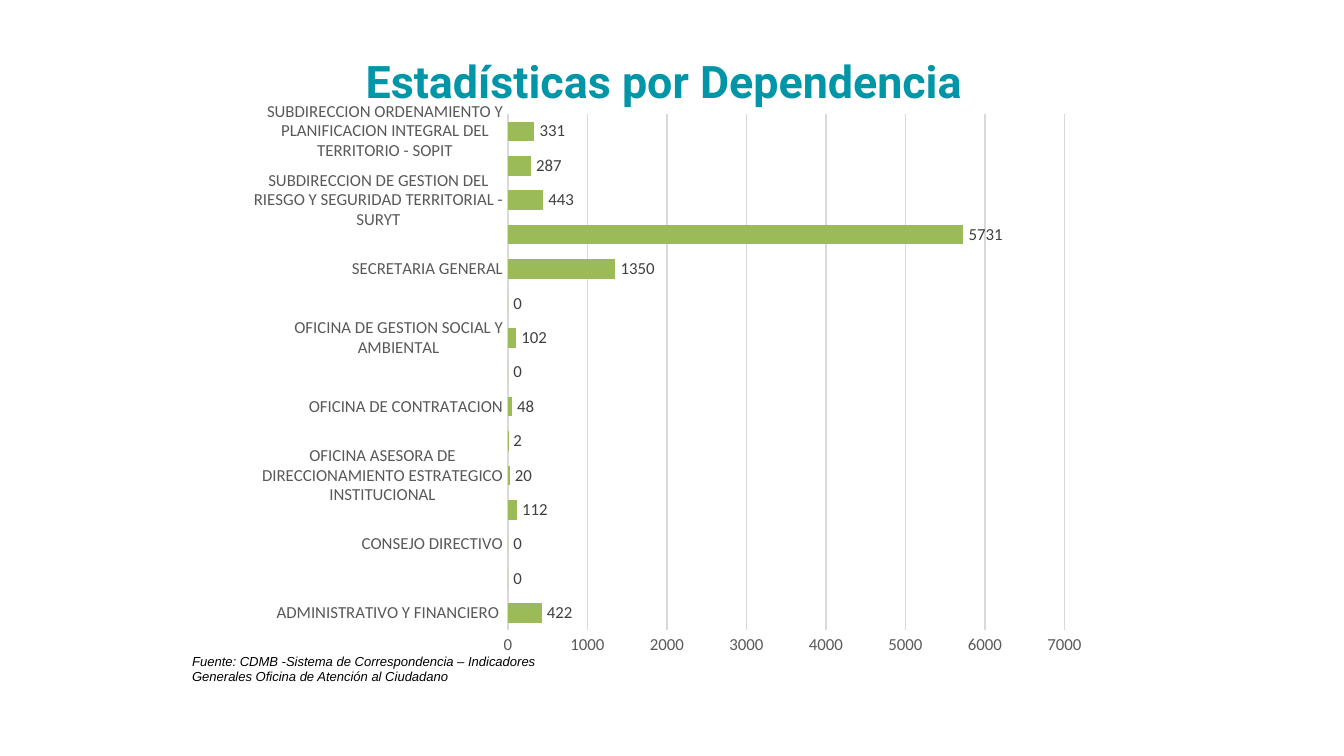
from lxml import etree
from pptx import Presentation
from pptx.chart.data import CategoryChartData
from pptx.dml.color import RGBColor
from pptx.enum import chart as charts, text
from pptx.oxml import ns
from pptx.util import Inches, Pt

TEAL = RGBColor(0x00, 0x96, 0xA7)
GREEN = RGBColor(0x9B, 0xBB, 0x59)
BLACK = RGBColor(0x00, 0x00, 0x00)
DARK_GRAY = RGBColor(0x40, 0x40, 0x40)
GRAY = RGBColor(0x59, 0x59, 0x59)
LIGHT_GRAY = RGBColor(0xD9, 0xD9, 0xD9)

SLIDE_WIDTH = Inches(10)
SLIDE_HEIGHT = SLIDE_WIDTH * 9 // 16
CHART_LEFT, CHART_TOP, CHART_WIDTH, CHART_HEIGHT = 1.83, 0.67, 6.34, 4.29
PLOT_LEFT, PLOT_TOP, PLOT_WIDTH, PLOT_HEIGHT = 3.78, 0.85, 4.14, 3.84

DEPARTMENTS = {
    "ADMINISTRATIVO Y FINANCIERO ": 422,
    "ASAMBLEA GENERAL": 0,
    "CONSEJO DIRECTIVO": 0,
    "DIRECCION GENERAL": 112,
    "OFICINA ASESORA DE DIRECCIONAMIENTO ESTRATEGICO INSTITUCIONAL": 20,
    "OFICINA CONTROL INTERNO": 2,
    "OFICINA DE CONTRATACION": 48,
    "OFICINA DE CONTROL DISCIPLINARIO INTERNO": 0,
    "OFICINA DE GESTION SOCIAL Y AMBIENTAL": 102,
    "REVISORA FISCAL": 0,
    "SECRETARIA GENERAL": 1350,
    "SUBDIRECCION DE EVALUACION Y CONTROL AMBIENTAL": 5731,
    "SUBDIRECCION DE GESTION DEL RIESGO Y SEGURIDAD TERRITORIAL - SURYT": 443,
    "SUBDIRECCION DE GESTION INTEGRAL DE LA OFERTA AMBIENTAL- SUGOA": 287,
    "SUBDIRECCION ORDENAMIENTO Y PLANIFICACION INTEGRAL DEL TERRITORIO - SOPIT": 331,
}
PLOT_LAYOUT = {
    "layoutTarget": "inner", "xMode": "edge", "yMode": "edge",
    "x": (PLOT_LEFT - CHART_LEFT) / CHART_WIDTH,
    "y": (PLOT_TOP - CHART_TOP) / CHART_HEIGHT,
    "w": PLOT_WIDTH / CHART_WIDTH,
    "h": PLOT_HEIGHT / CHART_HEIGHT,
}


def set_attributes(target, **values):
    for name, value in values.items():
        setattr(target, name, value)


def format_font(font, color, **values):
    set_attributes(font, **values)
    font.color.rgb = color


def fill_text(shape, wording, color, margins, **font_values):
    frame = shape.text_frame
    left, top, right = (Inches(margin) for margin in margins)
    set_attributes(frame, margin_left=left, margin_top=top, margin_right=right,
                   margin_bottom=0, word_wrap=True,
                   vertical_anchor=text.MSO_ANCHOR.TOP)
    paragraph = frame.paragraphs[0]
    paragraph.alignment = text.PP_ALIGN.LEFT
    run = paragraph.add_run()
    run.text = wording
    format_font(run.font, color, **font_values)


def add_title(slide):
    title = slide.shapes.title
    set_attributes(title, left=Inches(2.72), top=Inches(0.4),
                   width=Inches(5.38), height=Inches(0.4))
    fill_text(title, "Estadísticas por Dependencia", TEAL, (0, 0, 0),
              name="Roboto", size=Pt(24), bold=True)


def add_source_note(slide):
    note = slide.shapes.add_textbox(Inches(1.42), Inches(4.85), Inches(3.01), Inches(0.25))
    fill_text(note, "Fuente: CDMB -Sistema de Correspondencia – Indicadores "
              "Generales Oficina de Atención al Ciudadano", BLACK, (0.01, 0.01, 0.1),
              name="Arial", size=Pt(7), italic=True)


def place_plot_area(chart):
    plot_area = chart.element.find(".//" + ns.qn("c:plotArea"))
    layout = plot_area.find(ns.qn("c:layout"))
    if layout is None:
        layout = etree.Element(ns.qn("c:layout"))
        plot_area.insert(0, layout)
    manual = etree.SubElement(layout, ns.qn("c:manualLayout"))
    for name, value in PLOT_LAYOUT.items():
        etree.SubElement(manual, ns.qn("c:" + name)).set("val", str(value))


def format_axes(chart):
    for axis in (chart.category_axis, chart.value_axis):
        set_attributes(axis, major_tick_mark=charts.XL_TICK_MARK.NONE,
                       minor_tick_mark=charts.XL_TICK_MARK.NONE)
        format_font(axis.tick_labels.font, GRAY, name="Calibri", size=Pt(9))
    chart.value_axis.format.line.fill.background()
    set_attributes(chart.value_axis, minimum_scale=0, maximum_scale=7000, major_unit=1000)
    for line in (chart.category_axis.format.line,
                 chart.value_axis.major_gridlines.format.line):
        line.color.rgb = LIGHT_GRAY
        line.width = Pt(0.75)


def add_department_chart(slide):
    data = CategoryChartData()
    data.categories = list(DEPARTMENTS)
    data.add_series("Series 1", list(DEPARTMENTS.values()))
    chart = slide.shapes.add_chart(
        charts.XL_CHART_TYPE.BAR_CLUSTERED, Inches(CHART_LEFT), Inches(CHART_TOP),
        Inches(CHART_WIDTH), Inches(CHART_HEIGHT), data).chart
    set_attributes(chart, has_legend=False, has_title=False)
    format_font(chart.font, BLACK, name="Calibri", size=Pt(10))
    plot = chart.plots[0]
    set_attributes(plot, gap_width=75, overlap=-25, vary_by_categories=False)
    series = plot.series[0]
    series.format.fill.solid()
    series.format.fill.fore_color.rgb = GREEN
    labels = series.data_labels
    set_attributes(labels, show_value=True, position=charts.XL_LABEL_POSITION.OUTSIDE_END)
    format_font(labels.font, DARK_GRAY, name="Calibri", size=Pt(9))
    format_axes(chart)
    place_plot_area(chart)


def main():
    presentation = Presentation()
    set_attributes(presentation, slide_width=SLIDE_WIDTH, slide_height=SLIDE_HEIGHT)
    slide = presentation.slides.add_slide(presentation.slide_layouts[5])
    add_source_note(slide)
    add_title(slide)
    add_department_chart(slide)
    presentation.save("out.pptx")


if __name__ == "__main__":
    main()
